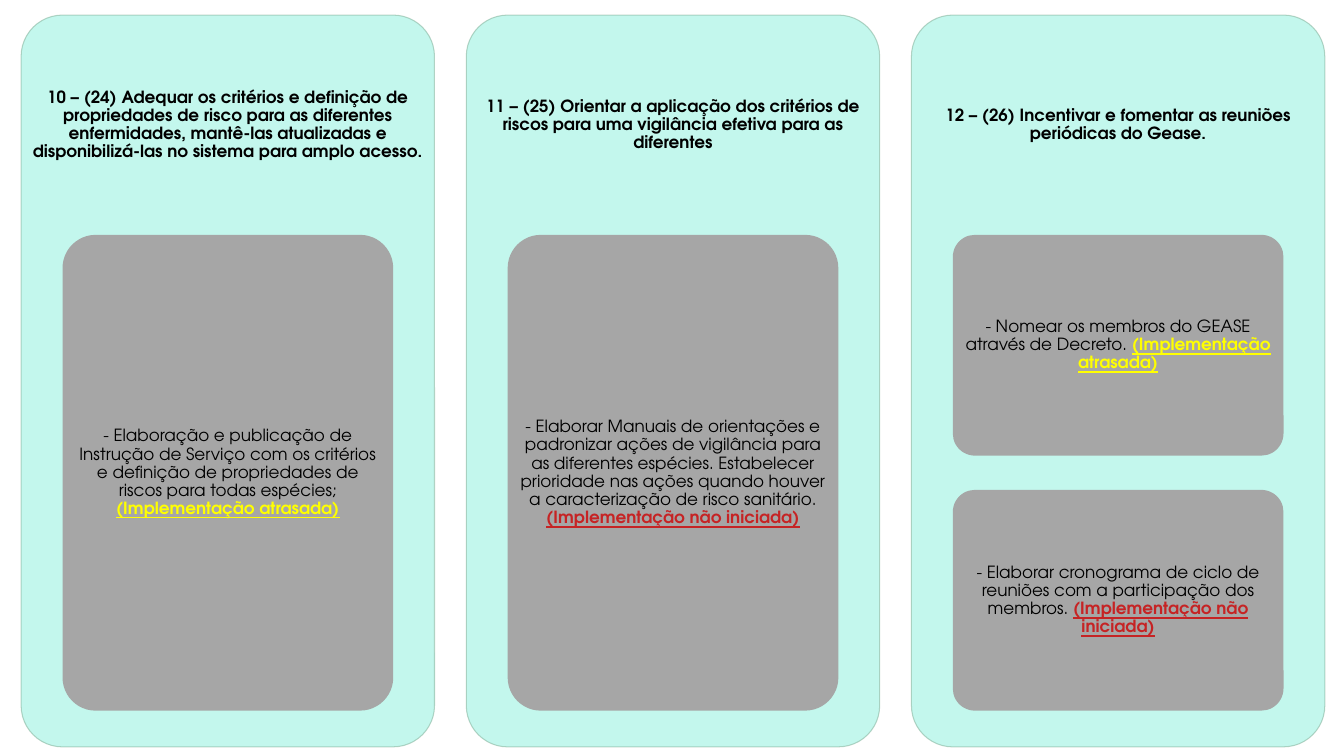
from lxml import etree
from pptx import Presentation
from pptx.dml.color import RGBColor
from pptx.enum.shapes import MSO_SHAPE
from pptx.enum.text import MSO_ANCHOR, PP_ALIGN
from pptx.oxml.ns import qn
from pptx.util import Inches, Pt

ROUNDED = MSO_SHAPE.ROUNDED_RECTANGLE
MIDDLE = MSO_ANCHOR.MIDDLE
CENTER = PP_ALIGN.CENTER
FONT = "TeX Gyre Adventor"

BLACK = RGBColor(0x00, 0x00, 0x00)
WHITE = RGBColor(0xFF, 0xFF, 0xFF)
MINT = RGBColor(0xC3, 0xF7, 0xED)
GREEN = RGBColor(0x8A, 0xB7, 0xA1)
GRAY = RGBColor(0xA6, 0xA6, 0xA6)
YELLOW = RGBColor(0xFF, 0xFF, 0x00)
RED = RGBColor(0xC6, 0x23, 0x24)

LEFT, TOP, PITCH = 0.21, 0.15, 4.415
PANEL_W, PANEL_H, HEADING_H = 4.1, 7.26, 2.18
CARD_INDENT, CARD_W = 0.41, 3.28
CARDS_TOP, CARDS_H, CARD_GAP = 2.33, 4.72, 0.34

DELAYED = ("(Implementação atrasada)", YELLOW)
NOT_STARTED = ("(Implementação não iniciada)", RED)

COLUMNS = [
    ("10 – (24) Adequar os critérios e definição de propriedades de risco "
     "para as diferentes enfermidades, mantê-las atualizadas e "
     "disponibilizá-las no sistema para amplo acesso.",
     [("- Elaboração e publicação de Instrução de Serviço com os critérios e "
       "definição de propriedades de riscos para todas espécies; ", DELAYED)]),
    ("11 – (25) Orientar a aplicação dos critérios de riscos para uma "
     "vigilância efetiva para as diferentes",
     [("- Elaborar Manuais de orientações e padronizar ações de vigilância "
       "para as diferentes espécies. Estabelecer prioridade nas ações quando "
       "houver a caracterização de risco sanitário. ", NOT_STARTED)]),
    ("12 – (26) Incentivar e fomentar as reuniões periódicas do Gease.",
     [("- Nomear os membros do GEASE através de Decreto. ", DELAYED),
      ("- Elaborar cronograma de ciclo de reuniões com a participação dos "
       "membros. ", NOT_STARTED)]),
]


def add_rounded(slide, x, y, w, h, fill):
    sp = slide.shapes.add_shape(ROUNDED, Inches(x), Inches(y), Inches(w), Inches(h))
    sp.adjustments[0] = 0.1
    sp.shadow.inherit = False
    sp.fill.solid()
    sp.fill.fore_color.rgb = fill
    sp.line.fill.background()
    return sp


def set_outline(sp, color, opacity):
    sp.line.color.rgb = color
    sp.line.width = Pt(0.75)
    clr = sp._element.spPr.find(qn("a:ln")).find(".//" + qn("a:srgbClr"))
    etree.SubElement(clr, qn("a:alpha")).set("val", str(opacity * 1000))


def start_text(sp, inset):
    """Prepare a centred text frame and return its paragraph."""
    tf = sp.text_frame
    tf.word_wrap = True
    tf.vertical_anchor = MIDDLE
    tf.margin_left = tf.margin_right = Inches(inset)
    tf.margin_top = tf.margin_bottom = Inches(inset)
    p = tf.paragraphs[0]
    p.alignment = CENTER
    p.line_spacing = 0.9
    return p


def add_run(p, text, color=BLACK, bold=False, underline=False):
    r = p.add_run()
    r.text = text
    r.font.name = FONT
    r.font.size = Pt(12)
    r.font.color.rgb = color
    r.font.bold = bold
    r.font.underline = underline


def add_panel(slide, x, heading):
    set_outline(add_rounded(slide, x, TOP, PANEL_W, PANEL_H, MINT), GREEN, 60)
    box = slide.shapes.add_textbox(Inches(x), Inches(TOP),
                                   Inches(PANEL_W), Inches(HEADING_H))
    add_run(start_text(box, 0.05), heading, bold=True)


def add_card(slide, x, y, h, action, status):
    p = start_text(add_rounded(slide, x, y, CARD_W, h, GRAY), 0.03)
    label, color = status
    add_run(p, action)
    add_run(p, label, color, bold=True, underline=True)


def main():
    prs = Presentation()
    prs.slide_width, prs.slide_height = Inches(13.33), Inches(7.5)
    slide = prs.slides.add_slide(prs.slide_layouts[6])
    slide.background.fill.solid()
    slide.background.fill.fore_color.rgb = WHITE

    for col, (heading, cards) in enumerate(COLUMNS):
        x = LEFT + col * PITCH
        add_panel(slide, x, heading)
        card_h = (CARDS_H - CARD_GAP * (len(cards) - 1)) / len(cards)
        for row, (action, status) in enumerate(cards):
            y = CARDS_TOP + row * (card_h + CARD_GAP)
            add_card(slide, x + CARD_INDENT, y, card_h, action, status)

    prs.save("out.pptx")


if __name__ == "__main__":
    main()
